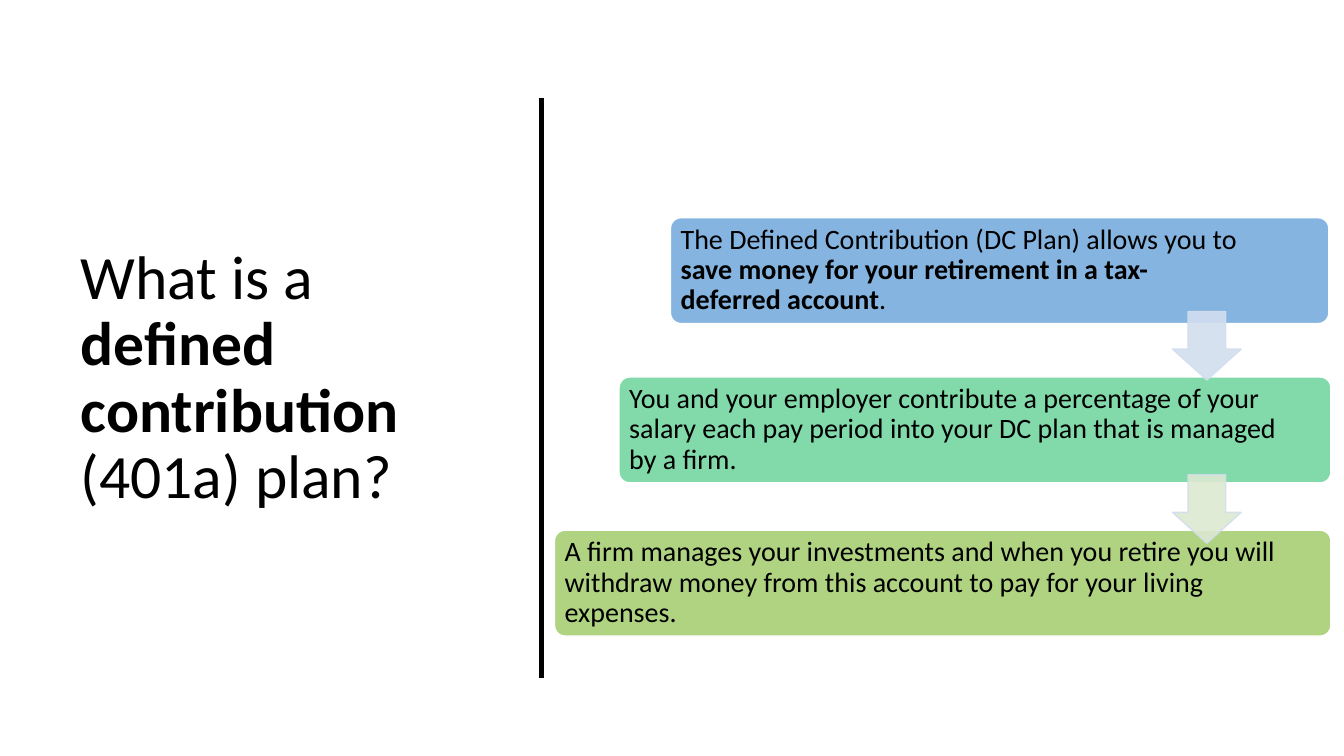
from dataclasses import dataclass

from lxml import etree
from pptx import Presentation
from pptx import util as u
from pptx.dml.color import RGBColor
from pptx.enum import shapes, text
from pptx.oxml.ns import qn

PX = 9144


@dataclass(frozen=True)
class Theme:
    font: str = "Calibri"
    ink: str = "000000"
    paper: str = "FFFFFF"
    arrow_line: str = "D2DEEF"
    card_fills: tuple = ("5B9BD5", "59CD8E", "95C557")
    arrow_fills: tuple = ("D2DEEF", "DCE9D1")
    title_size: int = 44
    body_size: int = 20
    card_alpha: int = 75
    arrow_alpha: int = 90


THEME = Theme()

TITLE = [("What is a ", False), ("defined contribution ", True), ("(401a) plan?", False)]

CARDS = [
    ((665, 216, 653, 105), 80, [
        ("The Defined Contribution (DC Plan) allows you to ", False),
        ("save money for your retirement in a tax-deferred account", True),
        (".", False)]),
    ((614, 374, 706, 105), 26, [
        ("You and your employer contribute a percentage of your salary each pay "
         "period into your DC plan that is managed by a firm.", False)]),
    ((550, 526, 770, 105), 24, [
        ("A firm manages your investments and when you retire you will withdraw "
         "money from this account to pay for your living expenses.", False)]),
]

ARROWS = [(1163, 309, 68, 68), (1163, 471, 68, 68)]


def px(*lengths):
    return [u.Emu(n * PX) for n in lengths]


def apply(target, values):
    for name, value in values.items():
        setattr(target, name, value)


def paint(color_format, color, alpha=100):
    color_format.solid()
    color_format.fore_color.rgb = RGBColor.from_string(color)
    if alpha < 100:
        clr = color_format._xPr.find(qn("a:solidFill"))[0]
        etree.SubElement(clr, qn("a:alpha"), val=str(alpha * 1000))


def write(tf, runs, size, insets):
    left, top, right, bottom = px(*insets)
    apply(tf, dict(word_wrap=True, auto_size=text.MSO_AUTO_SIZE.NONE,
                   vertical_anchor=text.MSO_ANCHOR.MIDDLE, margin_left=left,
                   margin_top=top, margin_right=right, margin_bottom=bottom))
    p = tf.paragraphs[0]
    apply(p, dict(alignment=text.PP_ALIGN.LEFT, line_spacing=0.9))
    for words, bold in runs:
        r = p.add_run()
        r.text = words
        apply(r.font, dict(name=THEME.font, size=u.Pt(size), bold=bold))
        r.font.color.rgb = RGBColor.from_string(THEME.ink)


def add_preset(s, kind, box, adjustments, fill, line, alpha, line_alpha=100):
    sp = s.shapes.add_shape(kind, *px(*box))
    sp.shadow.inherit = False
    for i, value in enumerate(adjustments):
        sp.adjustments[i] = value
    paint(sp.fill, fill, alpha)
    paint(sp.line.fill, line, line_alpha)
    sp.line.width = u.Pt(1)
    return sp


def add_title(s, box):
    sp = s.shapes.title
    apply(sp, dict(zip(("left", "top", "width", "height"), px(*box))))
    write(sp.text_frame, TITLE, THEME.title_size, (10, 5, 10, 5))


def add_divider(s, box):
    x, y, _, h = box
    line = s.shapes.add_connector(shapes.MSO_CONNECTOR.STRAIGHT, *px(x, y, x, y + h))
    line.line.color.rgb = RGBColor.from_string(THEME.ink)
    line.line.width = u.Pt(3)
    etree.SubElement(line._element.spPr, qn("a:effectLst"))


def add_card(s, box, right_inset, runs, fill):
    sp = add_preset(s, shapes.MSO_SHAPE.ROUNDED_RECTANGLE, box, [0.1],
                    fill, THEME.paper, THEME.card_alpha)
    write(sp.text_frame, runs, THEME.body_size, (7, 0, right_inset, 0))


def add_arrow(s, box, fill):
    add_preset(s, shapes.MSO_SHAPE.DOWN_ARROW, box, [0.55, 0.45], fill,
               THEME.arrow_line, THEME.arrow_alpha, THEME.arrow_alpha)


def main():
    prs = Presentation()
    prs.slide_width, prs.slide_height = u.Inches(13.33), u.Inches(7.5)
    s = prs.slides.add_slide(prs.slide_layouts[5])
    add_title(s, (70, 225, 401, 302))
    for (box, right_inset, runs), fill in zip(CARDS, THEME.card_fills):
        add_card(s, box, right_inset, runs, fill)
    for box, fill in zip(ARROWS, THEME.arrow_fills):
        add_arrow(s, box, fill)
    add_divider(s, (537, 97, 0, 576))
    prs.save("out.pptx")


if __name__ == "__main__":
    main()
